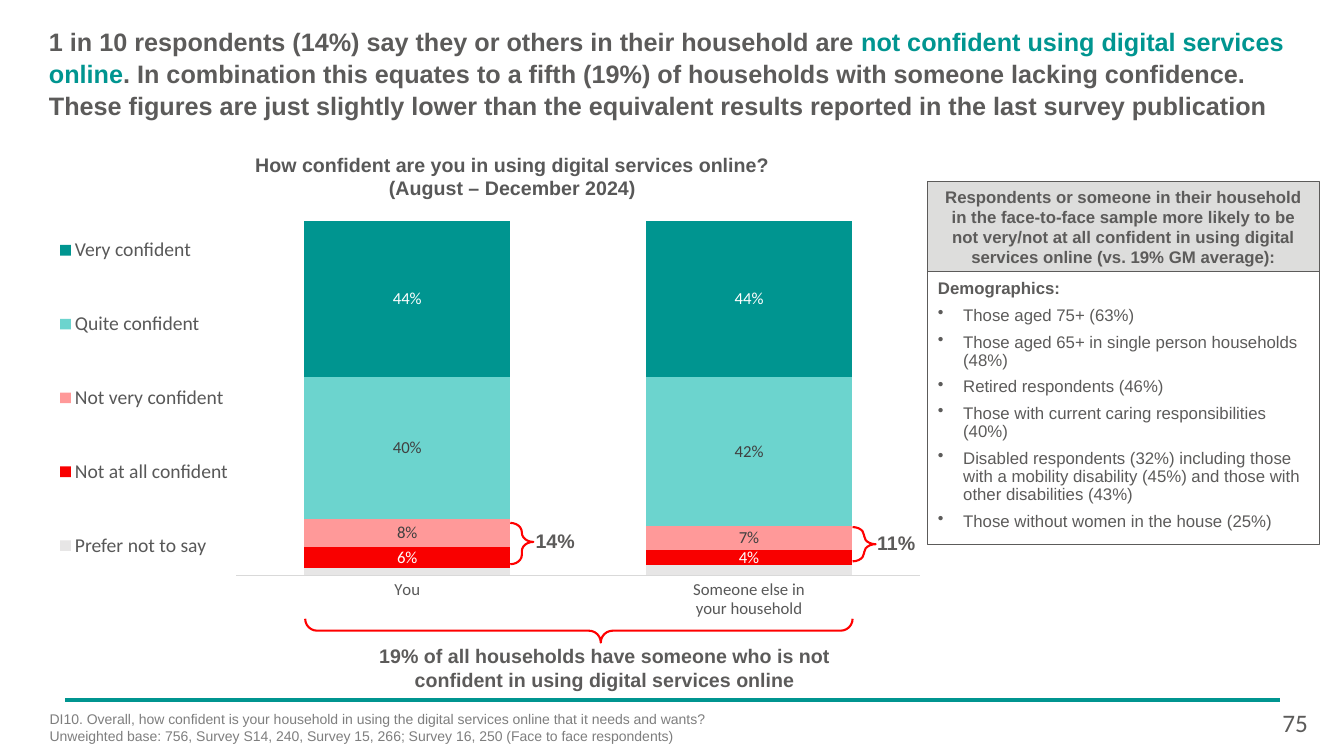
from lxml.etree import SubElement
from pptx import Presentation
from pptx.chart.data import CategoryChartData as Data
from pptx.dml.color import RGBColor as RGB
from pptx.enum.chart import XL_CHART_TYPE as Kind, XL_LABEL_POSITION as Spot, XL_TICK_MARK as Tick
from pptx.enum.shapes import MSO_CONNECTOR as Link, MSO_SHAPE as Shape
from pptx.enum.text import MSO_ANCHOR as Anchor, PP_ALIGN as Align
from pptx.oxml import parse_xml
from pptx.oxml.ns import nsdecls, qn
from pptx.util import Pt

TEAL = RGB(0x00, 0x95, 0x90)
AQUA = RGB(0x6C, 0xD4, 0xCE)
PINK = RGB(0xFF, 0x99, 0x99)
RED = RGB(0xF9, 0x00, 0x00)
PALE = RGB(0xE7, 0xE6, 0xE6)
BRACE = RGB(0xFF, 0x00, 0x00)
WHITE = RGB(0xFF, 0xFF, 0xFF)
DARK = RGB(0x40, 0x40, 0x40)
TEXT = RGB(0x5C, 0x5B, 0x5A)
GREY = RGB(0x58, 0x58, 0x58)
NOTE = RGB(0x7E, 0x7E, 0x7E)
RULE = RGB(0xD9, 0xD9, 0xD9)
PANEL = RGB(0xDD, 0xDD, 0xDC)

deck = Presentation()
deck.slide_width, deck.slide_height = Pt(960), Pt(540)
slide = deck.slides.add_slide(deck.slide_layouts[6])
shapes = slide.shapes


def style(frame, size, color, bold=False, face="Arial", align=Align.LEFT):
    frame.word_wrap = True
    frame.margin_left = frame.margin_right = 0
    frame.margin_top = frame.margin_bottom = 0
    for para in frame.paragraphs:
        para.alignment = align
        for run in para.runs:
            run.font.size, run.font.name = Pt(size), face
            run.font.bold = bold
            run.font.color.rgb = color


def write(x, y, w, h, text, *look):
    frame = shapes.add_textbox(Pt(x), Pt(y), Pt(w), Pt(h)).text_frame
    frame.text = text
    style(frame, *look)
    return frame


rule = shapes.add_connector(Link.STRAIGHT, Pt(46.5), Pt(500), Pt(914), Pt(500))
rule.line.color.rgb, rule.line.width = TEAL, Pt(3)
SubElement(rule.element.spPr, qn("a:effectLst"))

title = write(35, 18, 892, 67, "1 in 10 respondents (14%) say they or others in their household are ",
              18, TEXT, True)
head = title.paragraphs[0]
head.line_spacing = 1.05
head.add_run().text = "not confident using digital services online"
head.add_run().text = (". In combination this equates to a fifth (19%) of households "
                       "with someone lacking confidence.")
head.add_line_break()
head.add_run().text = ("These figures are just slightly lower than the equivalent results "
                       "reported in the last survey publication")
style(title, 18, TEXT, True)
head.runs[1].font.color.rgb = TEAL

write(169, 109, 394, 36,
      "How confident are you in using digital services online?\v(August – December 2024)",
      14, GREY, True, "Arial", Align.CENTER)

levels = [
    ("Very confident", TEAL, WHITE, (0.44, 0.44)),
    ("Quite confident", AQUA, DARK, (0.40, 0.42)),
    ("Not very confident", PINK, DARK, (0.08, 0.07)),
    ("Not at all confident", RED, WHITE, (0.06, 0.04)),
    ("Prefer not to say", PALE, None, (0.02, 0.03)),
]

data = Data(number_format="0%")
data.categories = ["You", "Someone else in\nyour household"]
for name, fill, ink, vals in reversed(levels):
    data.add_series(name, vals)
chart = shapes.add_chart(Kind.COLUMN_STACKED, Pt(168.5), Pt(150), Pt(489), Pt(310), data).chart
chart.has_legend = chart.has_title = False
chart.font.name, chart.font.size = "Calibri", Pt(12)
chart.font.color.rgb = GREY
plot = chart.plots[0]
plot.gap_width, plot.overlap, plot.vary_by_categories = 66, 100, False

for bar, (name, fill, ink, vals) in zip(plot.series, reversed(levels)):
    bar.format.fill.solid()
    bar.format.fill.fore_color.rgb = fill
    if ink:
        tags = bar.data_labels
        tags.show_value, tags.position = True, Spot.CENTER
        tags.number_format, tags.number_format_is_linked = "0%", False
        tags.font.size, tags.font.name = Pt(12), "Calibri"
        tags.font.color.rgb = ink

scale = chart.value_axis
scale.minimum_scale, scale.maximum_scale = 0, 1
scale.has_major_gridlines = scale.visible = False
base = chart.category_axis
base.major_tick_mark = Tick.NONE
base.format.line.color.rgb, base.format.line.width = RULE, Pt(0.75)

area = chart._chartSpace.chart.plotArea
for old in area.findall(qn("c:layout")):
    area.remove(old)
area.insert(0, parse_xml(
    f'<c:layout {nsdecls("c")}><c:manualLayout><c:layoutTarget val="inner"/>'
    '<c:xMode val="edge"/><c:yMode val="edge"/><c:x val="0"/><c:y val="0.025"/>'
    '<c:w val="1"/><c:h val="0.817"/></c:manualLayout></c:layout>'))

for row, (name, fill, ink, vals) in enumerate(levels):
    top = 175 + 52.75 * row
    key = shapes.add_shape(Shape.RECTANGLE, Pt(43), Pt(top), Pt(7.6), Pt(7.6))
    key.shadow.inherit = False
    key.fill.solid()
    key.fill.fore_color.rgb = fill
    key.line.fill.background()
    write(53.5, top - 5.5, 120, 19, name, 14, GREY, False, "Calibri")

braces = [
    (364.5, 373.5, 16.5, 29.5, 0, 0.4, 0.46),
    (609, 376.5, 16.5, 24.5, 0, 0.36, 0.5),
    (405, 255, 17, 391, 90, 0.5, 0.46),
]
for x, y, w, h, turn, bend, tip in braces:
    brace = shapes.add_shape(Shape.RIGHT_BRACE, Pt(x), Pt(y), Pt(w), Pt(h))
    brace.shadow.inherit = False
    brace.rotation = turn
    brace.adjustments[0], brace.adjustments[1] = bend, tip
    brace.fill.background()
    brace.line.color.rgb, brace.line.width = BRACE, Pt(1.5)

write(382.5, 378, 34, 19, "14%", 14, TEXT, True)
write(626.5, 379, 34, 19, "11%", 14, TEXT, True)
write(267, 460, 330, 36,
      "19% of all households have someone who is not\vconfident in using digital services online",
      14, TEXT, True, "Arial", Align.CENTER)

lead = ("Respondents or someone in their household in the face-to-face sample more likely to be "
        "not very/not at all confident in using digital services online (vs. 19% GM average):")
points = [
    "Demographics:",
    "Those aged 75+ (63%)",
    "Those aged 65+ in single person households (48%)",
    "Retired respondents (46%)",
    "Those with current caring responsibilities (40%)",
    "Disabled respondents (32%) including those with a mobility disability (45%) "
    "and those with other disabilities (43%)",
    "Those without women in the house (25%)",
]
frames = []
for y, h, text, bold, align in [(130, 64, lead, True, Align.CENTER),
                                (194, 195, "\n".join(points), False, Align.LEFT)]:
    box = shapes.add_shape(Shape.RECTANGLE, Pt(662.5), Pt(y), Pt(280), Pt(h))
    box.shadow.inherit = False
    box.fill.background()
    box.line.color.rgb, box.line.width = TEXT, Pt(0.75)
    box.text_frame.text = text
    style(box.text_frame, 12, TEXT, bold, "Arial", align)
    box.text_frame.margin_left = box.text_frame.margin_right = Pt(7.5)
    frames.append(box.text_frame)
    if bold:
        box.fill.solid()
        box.fill.fore_color.rgb = PANEL

frames[0].vertical_anchor = Anchor.MIDDLE
frames[1].vertical_anchor = Anchor.TOP
frames[1].margin_top = Pt(6)
first, *rest = frames[1].paragraphs
first.line_spacing = Pt(13)
first.runs[0].font.bold = True
for para in rest:
    para.line_spacing, para.space_before = Pt(13), Pt(6)
    props = para._p.get_or_add_pPr()
    props.set("marL", str(Pt(18)))
    props.set("indent", str(Pt(-18)))
    SubElement(props, qn("a:buChar")).set("char", "•")

write(35.5, 507.5, 560, 26,
      "DI10. Overall, how confident is your household in using the digital services online "
      "that it needs and wants?\vUnweighted base: 756, Survey S14, 240, Survey 15, 266; "
      "Survey 16, 250 (Face to face respondents)", 10, NOTE)
write(916, 505, 24, 24, "75", 18, TEXT, False, "Calibri")

deck.save("out.pptx")
